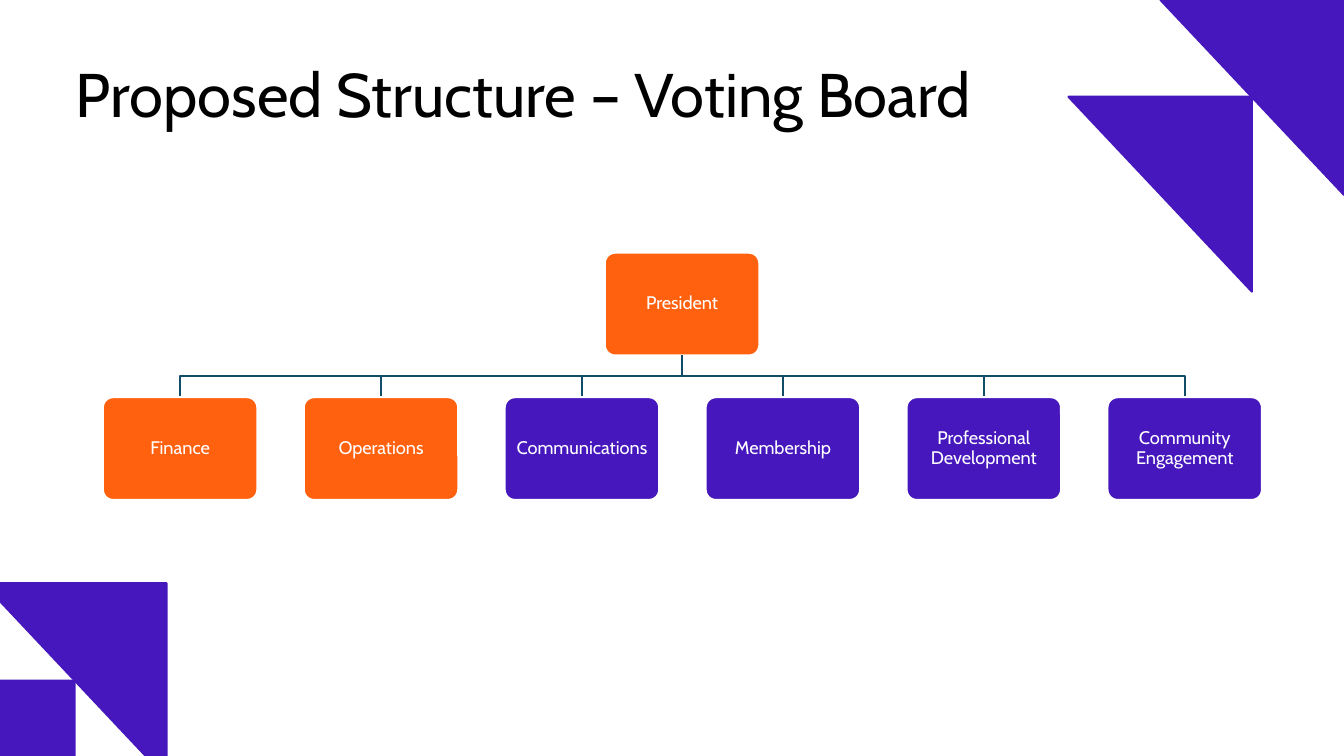
from pptx import Presentation
from pptx.dml.color import RGBColor
from pptx.enum.shapes import MSO_SHAPE
from pptx.enum.text import MSO_ANCHOR, PP_ALIGN
from pptx.util import Pt

PX = 6096  # EMU per px, 150 px to the inch
SLIDE_WIDTH, SLIDE_HEIGHT = 2000, 1125
TITLE_ONLY = 5

ROUNDED = MSO_SHAPE.ROUNDED_RECTANGLE
RIGHT_TRIANGLE = MSO_SHAPE.RIGHT_TRIANGLE
MIDDLE = MSO_ANCHOR.MIDDLE
LEFT, CENTER = PP_ALIGN.LEFT, PP_ALIGN.CENTER

BLACK = RGBColor(0x00, 0x00, 0x00)
WHITE = RGBColor(0xFF, 0xFF, 0xFF)
ORANGE = RGBColor(0xFF, 0x61, 0x0F)
PURPLE = RGBColor(0x46, 0x17, 0xBC)
TEAL = RGBColor(0x11, 0x4D, 0x68)

FONT = "Cabin"
LINE_WIDTH = Pt(1.5)

BOX_WIDTH, BOX_HEIGHT = 230, 153
BOX_INSET = 12
PRESIDENT_TOP, ROLES_TOP = 376, 591
ROLES_LEFT, ROLE_PITCH = 153, 299
ROLES = [
    ("Finance", ORANGE),
    ("Operations", ORANGE),
    ("Communications", PURPLE),
    ("Membership", PURPLE),
    ("Professional Development", PURPLE),
    ("Community Engagement", PURPLE),
]

TRIANGLE_WIDTH, TRIANGLE_HEIGHT = 273, 290
TRIANGLE_PAIRS = [
    [(1590, 144), (1727, 0)],
    [(-162, 1013), (-25, 868)],
]


def place(shape, left, top, width, height):
    shape.left, shape.top = left * PX, top * PX
    shape.width, shape.height = width * PX, height * PX


def write(shape, text, size, color, alignment):
    frame = shape.text_frame
    frame.text = text
    frame.word_wrap = True
    frame.vertical_anchor = MIDDLE
    paragraph = frame.paragraphs[0]
    paragraph.alignment = alignment
    paragraph.line_spacing = 0.9
    font = paragraph.runs[0].font
    font.name, font.size, font.color.rgb = FONT, Pt(size), color


def add_filled_shape(shapes, kind, left, top, width, height, fill, line):
    shape = shapes.add_shape(kind, left * PX, top * PX, width * PX, height * PX)
    shape.shadow.inherit = False
    shape.fill.solid()
    shape.fill.fore_color.rgb = fill
    shape.line.color.rgb = line
    shape.line.width = LINE_WIDTH
    return shape


def add_box(shapes, left, top, text, fill):
    box = add_filled_shape(shapes, ROUNDED, left, top, BOX_WIDTH, BOX_HEIGHT, fill, WHITE)
    box.adjustments[0] = 0.1
    frame = box.text_frame
    frame.margin_left = frame.margin_right = BOX_INSET * PX
    frame.margin_top = frame.margin_bottom = BOX_INSET * PX
    write(box, text, 13, WHITE, CENTER)


def add_branch(shapes, start_x, start_y, end_x, end_y):
    """Draw an elbow line that turns halfway down."""
    middle_y = (start_y + end_y) // 2
    builder = shapes.build_freeform(start_x, start_y, scale=PX)
    builder.add_line_segments(
        [(start_x, middle_y), (end_x, middle_y), (end_x, end_y)], close=False
    )
    branch = builder.convert_to_shape()
    branch.shadow.inherit = False
    branch.fill.background()
    branch.line.color.rgb = TEAL
    branch.line.width = LINE_WIDTH


def add_title(slide, text):
    title = slide.shapes.title
    place(title, 98, 36, 1725, 218)
    write(title, text, 44, BLACK, LEFT)


def add_board_chart(slide):
    shapes = slide.shapes.add_group_shape().shapes
    president_left = ROLES_LEFT + ROLE_PITCH * (len(ROLES) - 1) // 2
    half_box = BOX_WIDTH // 2
    add_box(shapes, president_left, PRESIDENT_TOP, "President", ORANGE)
    for index, (role, fill) in enumerate(ROLES):
        left = ROLES_LEFT + index * ROLE_PITCH
        add_branch(shapes, president_left + half_box, PRESIDENT_TOP + BOX_HEIGHT,
                   left + half_box, ROLES_TOP)
        add_box(shapes, left, ROLES_TOP, role, fill)


def add_corner_triangles(slide, corners):
    shapes = slide.shapes.add_group_shape().shapes
    for left, top in corners:
        triangle = add_filled_shape(shapes, RIGHT_TRIANGLE, left, top, TRIANGLE_WIDTH,
                                    TRIANGLE_HEIGHT, PURPLE, PURPLE)
        triangle.rotation = 180


def main():
    presentation = Presentation()
    presentation.slide_width = SLIDE_WIDTH * PX
    presentation.slide_height = SLIDE_HEIGHT * PX
    slide = presentation.slides.add_slide(presentation.slide_layouts[TITLE_ONLY])
    add_title(slide, "Proposed Structure – Voting Board")
    add_board_chart(slide)
    for corners in TRIANGLE_PAIRS:
        add_corner_triangles(slide, corners)
    presentation.save("out.pptx")


if __name__ == "__main__":
    main()
